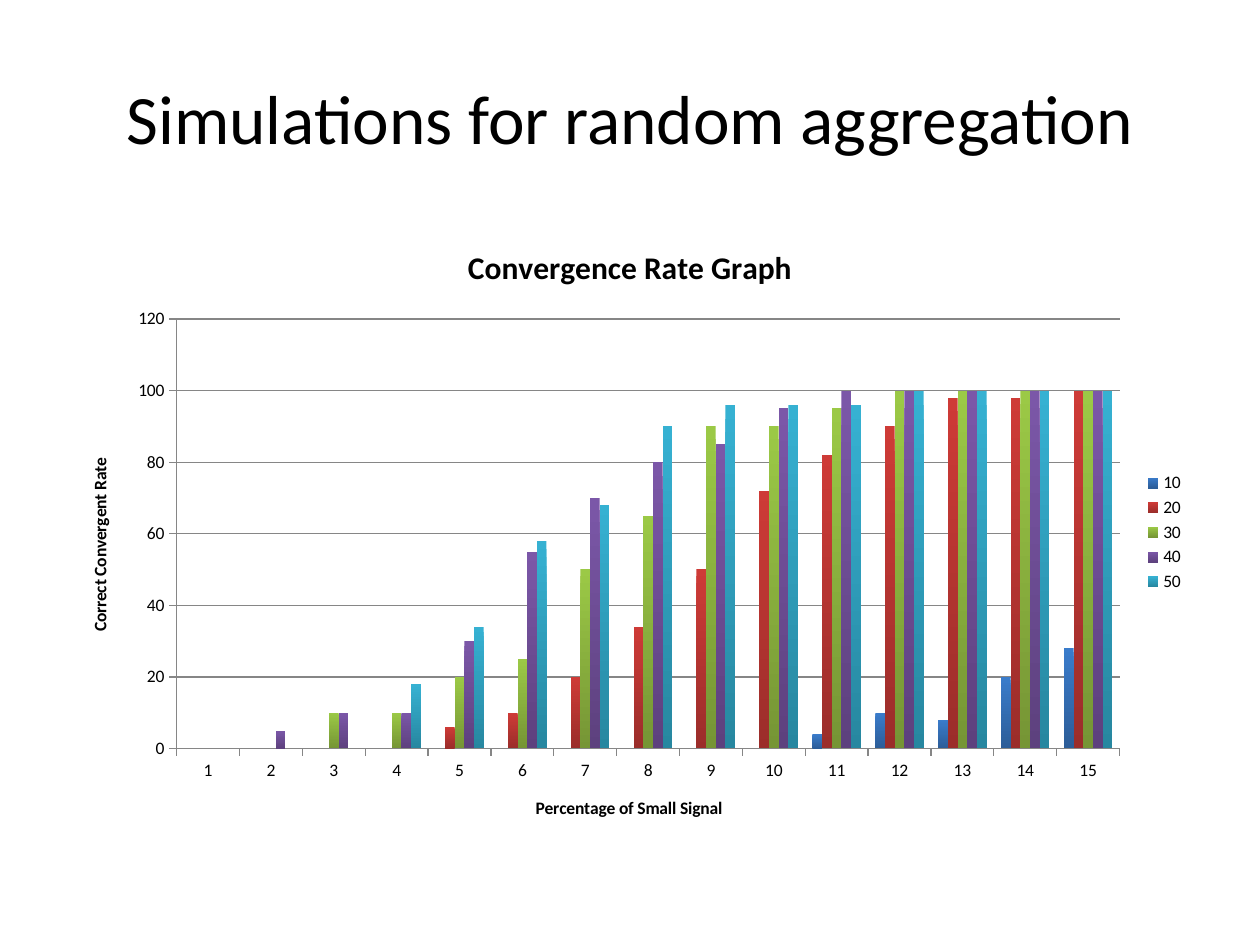
import pptx
import pptx.chart.data
import pptx.dml.color
import pptx.enum.chart
import pptx.enum.text
import pptx.util

Pt = pptx.util.Pt
RGBColor = pptx.dml.color.RGBColor

FONT = "Calibri"
BLACK = RGBColor(0x00, 0x00, 0x00)
GRAY = RGBColor(0x86, 0x86, 0x86)

# Series name: (values, top colour, bottom colour)
SERIES = {
    "10": ((0, 0, 0, 0, 0, 0, 0, 0, 0, 0, 4, 10, 8, 20, 28),
           RGBColor(0x3A, 0x7C, 0xCB), RGBColor(0x2C, 0x5D, 0x98)),
    "20": ((0, 0, 0, 0, 6, 10, 20, 34, 50, 72, 82, 90, 98, 98, 100),
           RGBColor(0xCE, 0x3B, 0x37), RGBColor(0x9B, 0x2D, 0x2A)),
    "30": ((0, 0, 10, 10, 20, 25, 50, 65, 90, 90, 95, 100, 100, 100, 100),
           RGBColor(0x9B, 0xC9, 0x46), RGBColor(0x76, 0x95, 0x35)),
    "40": ((0, 5, 10, 10, 30, 55, 70, 80, 85, 95, 100, 100, 100, 100, 100),
           RGBColor(0x7B, 0x57, 0xA8), RGBColor(0x5D, 0x41, 0x7E)),
    "50": ((0, 0, 0, 18, 34, 58, 68, 90, 96, 96, 96, 100, 100, 100, 100),
           RGBColor(0x36, 0xB1, 0xD2), RGBColor(0x27, 0x87, 0xA0)),
}


def write_text(frame, text, size, bold=False, color=BLACK):
    para = frame.paragraphs[0]
    para.alignment = pptx.enum.text.PP_ALIGN.CENTER
    span = para.add_run()
    span.text = text
    span.font.name = FONT
    span.font.size = Pt(size)
    span.font.bold = bold
    span.font.color.rgb = color


def add_title(page, text):
    title = page.shapes.title
    title.left, title.top, title.width, title.height = Pt(36), Pt(21.6), Pt(648), Pt(90)
    title.text_frame.vertical_anchor = pptx.enum.text.MSO_ANCHOR.MIDDLE
    write_text(title.text_frame, text, size=39.6)


def style_axis(axis, title):
    write_text(axis.axis_title.text_frame, title, size=10, bold=True)
    axis.major_tick_mark = pptx.enum.chart.XL_TICK_MARK.OUTSIDE
    axis.minor_tick_mark = pptx.enum.chart.XL_TICK_MARK.NONE
    axis.format.line.color.rgb = GRAY
    axis.format.line.width = Pt(0.75)


def fill_bars(series, top_color, bottom_color):
    fill = series.format.fill
    fill.gradient()
    fill.gradient_angle = 270
    for stop, color, position in zip(fill.gradient_stops, (top_color, bottom_color), (0, 1)):
        stop.color.rgb = color
        stop.position = position


def add_convergence_chart(page):
    data = pptx.chart.data.CategoryChartData()
    data.categories = [str(number) for number in range(1, 16)]
    for name, (values, _, _) in SERIES.items():
        data.add_series(name, values)
    chart = page.shapes.add_chart(
        pptx.enum.chart.XL_CHART_TYPE.COLUMN_CLUSTERED,
        Pt(36), Pt(126), Pt(648), Pt(356.4), data).chart

    chart.font.name = FONT
    chart.font.size = Pt(10)
    chart.font.color.rgb = BLACK
    write_text(chart.chart_title.text_frame, "Convergence Rate Graph", size=18, bold=True)
    chart.chart_title.include_in_layout = False

    chart.has_legend = True
    chart.legend.position = pptx.enum.chart.XL_LEGEND_POSITION.RIGHT
    chart.legend.include_in_layout = False

    style_axis(chart.category_axis, "Percentage of Small Signal")
    style_axis(chart.value_axis, "Correct Convergent Rate")
    chart.value_axis.minimum_scale = 0
    chart.value_axis.maximum_scale = 120
    chart.value_axis.major_unit = 20
    grid_line = chart.value_axis.major_gridlines.format.line
    grid_line.color.rgb = GRAY
    grid_line.width = Pt(0.75)

    plot = chart.plots[0]
    plot.gap_width = 150
    plot.overlap = 0
    plot.vary_by_categories = False
    for series in plot.series:
        _, top_color, bottom_color = SERIES[series.name]
        fill_bars(series, top_color, bottom_color)


def main():
    deck = pptx.Presentation()
    deck.slide_width, deck.slide_height = Pt(720), Pt(540)
    page = deck.slides.add_slide(deck.slide_layouts.get_by_name("Title Only"))
    add_title(page, "Simulations for random aggregation")
    add_convergence_chart(page)
    deck.save("out.pptx")


if __name__ == "__main__":
    main()
